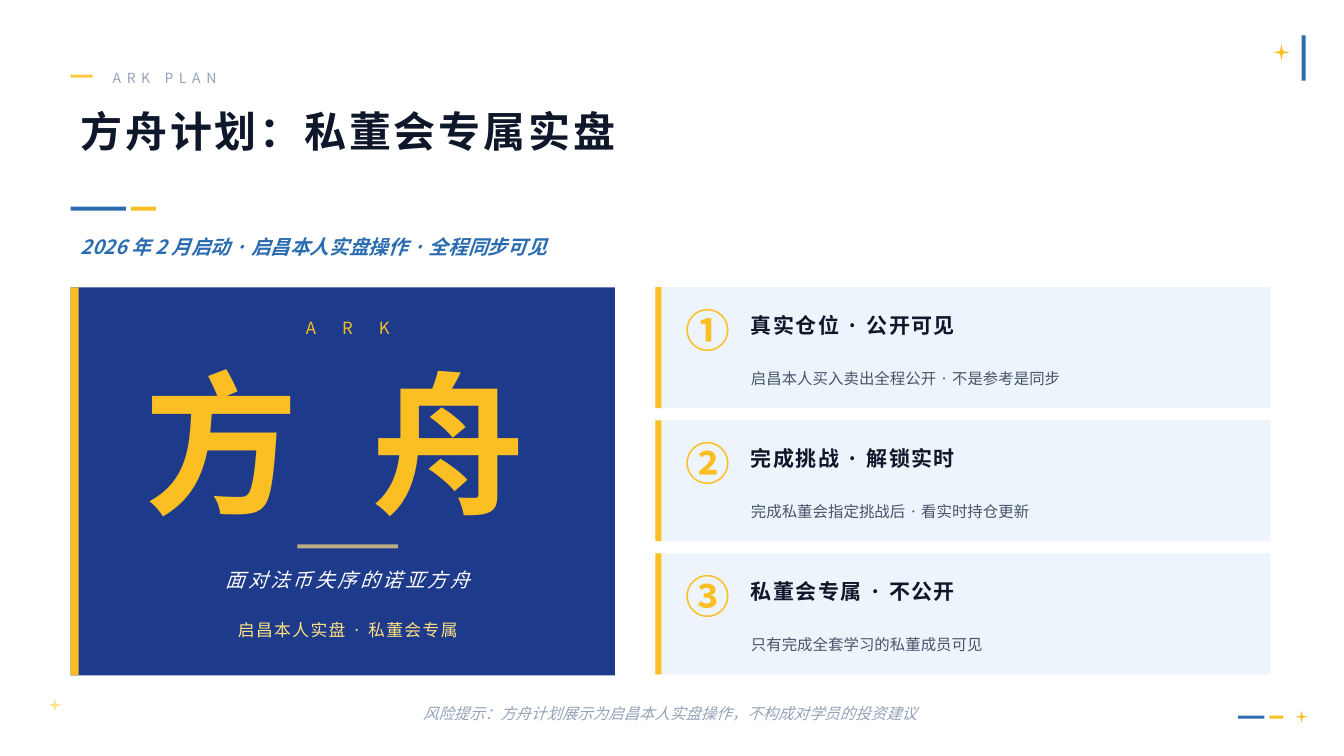
from dataclasses import dataclass
from typing import NamedTuple

from lxml.etree import SubElement
from pptx import Presentation
from pptx.dml.color import RGBColor
from pptx.enum.shapes import MSO_SHAPE as Preset
from pptx.enum.text import MSO_ANCHOR as Anchor, PP_ALIGN as Align
from pptx.oxml.ns import qn
from pptx.slide import Slide
from pptx.util import Inches, Pt


@dataclass(frozen=True)
class Theme:
    font: str = "Noto Sans CJK JP"
    blue: str = "2B6CB0"
    navy: str = "1E3A8A"
    gold: str = "FBBF24"
    pale_gold: str = "FFE082"
    ink: str = "0F172A"
    body: str = "475569"
    muted: str = "94A3B8"
    card: str = "EEF4FB"
    white: str = "FFFFFF"
    hero_size: int = 110
    number_size: int = 32
    title_size: int = 30
    heading_size: int = 15
    subtitle_size: int = 14
    label_size: int = 12
    body_size: int = 11
    kicker_size: int = 10


THEME = Theme()


class Box(NamedTuple):
    left: float
    top: float
    width: float
    height: float


@dataclass(frozen=True)
class Block:
    box: Box
    color: str
    preset: Preset = Preset.RECTANGLE
    opacity: int = 100


@dataclass(frozen=True)
class Label:
    text: str
    box: Box
    size: int
    color: str
    bold: bool = False
    italic: bool = False
    tracking: int = 0
    align: Align = Align.LEFT
    anchor: Anchor = Anchor.MIDDLE
    line_spacing: float = 1.0


class Benefit(NamedTuple):
    number: str
    heading: str
    detail: str


def draw_block(slide: Slide, block: Block) -> None:
    shape = slide.shapes.add_shape(block.preset, *map(Inches, block.box))
    shape.shadow.inherit = False
    shape.line.fill.background()
    shape.fill.solid()
    shape.fill.fore_color.rgb = RGBColor.from_string(block.color)
    if block.opacity < 100:
        color = shape.fill._xPr.find(qn("a:solidFill"))[0]
        SubElement(color, qn("a:alpha"), val=str(block.opacity * 1000))


def draw_label(slide: Slide, label: Label) -> None:
    text_frame = slide.shapes.add_textbox(*map(Inches, label.box)).text_frame
    text_frame.word_wrap = True
    text_frame.vertical_anchor = label.anchor
    text_frame.text = label.text
    paragraph = text_frame.paragraphs[0]
    paragraph.alignment = label.align
    if label.line_spacing != 1:
        paragraph.line_spacing = label.line_spacing
    run = paragraph.runs[0]
    run.font.name = THEME.font
    run.font.size = Pt(label.size)
    run.font.bold = label.bold
    run.font.italic = label.italic
    run.font.color.rgb = RGBColor.from_string(label.color)
    properties = run._r.get_or_add_rPr()
    SubElement(properties, qn("a:ea"), typeface=THEME.font)
    if label.tracking:
        properties.set("spc", str(label.tracking * 100))


# Corner ornaments and heading rules
ORNAMENTS = [
    Block(Box(12.91, 0.35, 0.04, 0.45), THEME.blue),
    Block(Box(12.63, 0.44, 0.16, 0.16), THEME.gold, Preset.STAR_4_POINT),
    Block(Box(12.28, 7.1, 0.26, 0.03), THEME.blue),
    Block(Box(12.59, 7.1, 0.14, 0.03), THEME.gold),
    Block(Box(12.85, 7.05, 0.12, 0.12), THEME.gold, Preset.STAR_4_POINT),
    Block(Box(0.48, 6.93, 0.13, 0.13), THEME.pale_gold, Preset.STAR_4_POINT),
    Block(Box(0.7, 0.74, 0.22, 0.03), THEME.gold, opacity=85),
    Block(Box(0.7, 2.05, 0.55, 0.04), THEME.blue),
    Block(Box(1.3, 2.05, 0.25, 0.04), THEME.gold),
]

HEADER = [
    Label("ARK PLAN", Box(1.02, 0.62, 8, 0.3), THEME.kicker_size, THEME.muted, tracking=4),
    Label("方舟计划：私董会专属实盘", Box(0.7, 1, 12, 1), THEME.title_size, THEME.ink,
          bold=True, tracking=2, anchor=Anchor.TOP),
    Label("2026 年 2 月启动 · 启昌本人实盘操作 · 全程同步可见", Box(0.7, 2.25, 11.9, 0.4),
          THEME.subtitle_size, THEME.blue, bold=True, italic=True),
]

# Navy panel on the left
PANEL_BLOCKS = [
    Block(Box(0.7, 2.85, 5.4, 3.85), THEME.navy),
    Block(Box(0.7, 2.85, 0.08, 3.85), THEME.gold),
    Block(Box(2.95, 5.4, 1, 0.04), THEME.pale_gold, opacity=70),
]

PANEL_LABELS = [
    Label("A R K", Box(0.95, 3.05, 5, 0.4), THEME.label_size, THEME.gold,
          tracking=8, align=Align.CENTER),
    *(Label(character, Box(left, 3.55, 2.5, 1.65), THEME.hero_size, THEME.gold,
            bold=True, align=Align.CENTER)
      for character, left in (("方", 0.95), ("舟", 3.2))),
    Label("面对法币失序的诺亚方舟", Box(0.95, 5.55, 5, 0.4), THEME.subtitle_size, THEME.white,
          italic=True, tracking=2, align=Align.CENTER),
    Label("启昌本人实盘 · 私董会专属", Box(0.95, 6.05, 5, 0.4), THEME.label_size,
          THEME.pale_gold, tracking=1, align=Align.CENTER),
]

# Benefit cards on the right
CARD_TOP, CARD_STEP = 2.85, 1.32
BENEFITS = [
    Benefit("①", "真实仓位 · 公开可见", "启昌本人买入卖出全程公开 · 不是参考是同步"),
    Benefit("②", "完成挑战 · 解锁实时", "完成私董会指定挑战后 · 看实时持仓更新"),
    Benefit("③", "私董会专属 · 不公开", "只有完成全套学习的私董成员可见"),
]

DISCLAIMER = Label("风险提示：方舟计划展示为启昌本人实盘操作，不构成对学员的投资建议",
                   Box(0.7, 6.9, 11.9, 0.35), THEME.body_size, THEME.muted,
                   italic=True, align=Align.CENTER)


def draw_benefit(slide: Slide, benefit: Benefit, top: float) -> None:
    draw_block(slide, Block(Box(6.5, top, 6.1, 1.2), THEME.card))
    draw_block(slide, Block(Box(6.5, top, 0.06, 1.2), THEME.gold))
    draw_label(slide, Label(benefit.number, Box(6.7, top + 0.1, 0.5, 0.7), THEME.number_size,
                            THEME.gold, bold=True, anchor=Anchor.TOP))
    draw_label(slide, Label(benefit.heading, Box(7.35, top + 0.15, 5.1, 0.45),
                            THEME.heading_size, THEME.ink, bold=True, tracking=1))
    draw_label(slide, Label(benefit.detail, Box(7.35, top + 0.6, 5.1, 0.55),
                            THEME.body_size, THEME.body, line_spacing=1.35))


def main() -> None:
    presentation = Presentation()
    presentation.slide_width, presentation.slide_height = Inches(13.33), Inches(7.5)
    slide = presentation.slides.add_slide(presentation.slide_layouts[6])

    for block in ORNAMENTS + PANEL_BLOCKS:
        draw_block(slide, block)
    for label in HEADER + PANEL_LABELS:
        draw_label(slide, label)
    for index, benefit in enumerate(BENEFITS):
        draw_benefit(slide, benefit, CARD_TOP + index * CARD_STEP)
    draw_label(slide, DISCLAIMER)

    presentation.save("out.pptx")


if __name__ == "__main__":
    main()
